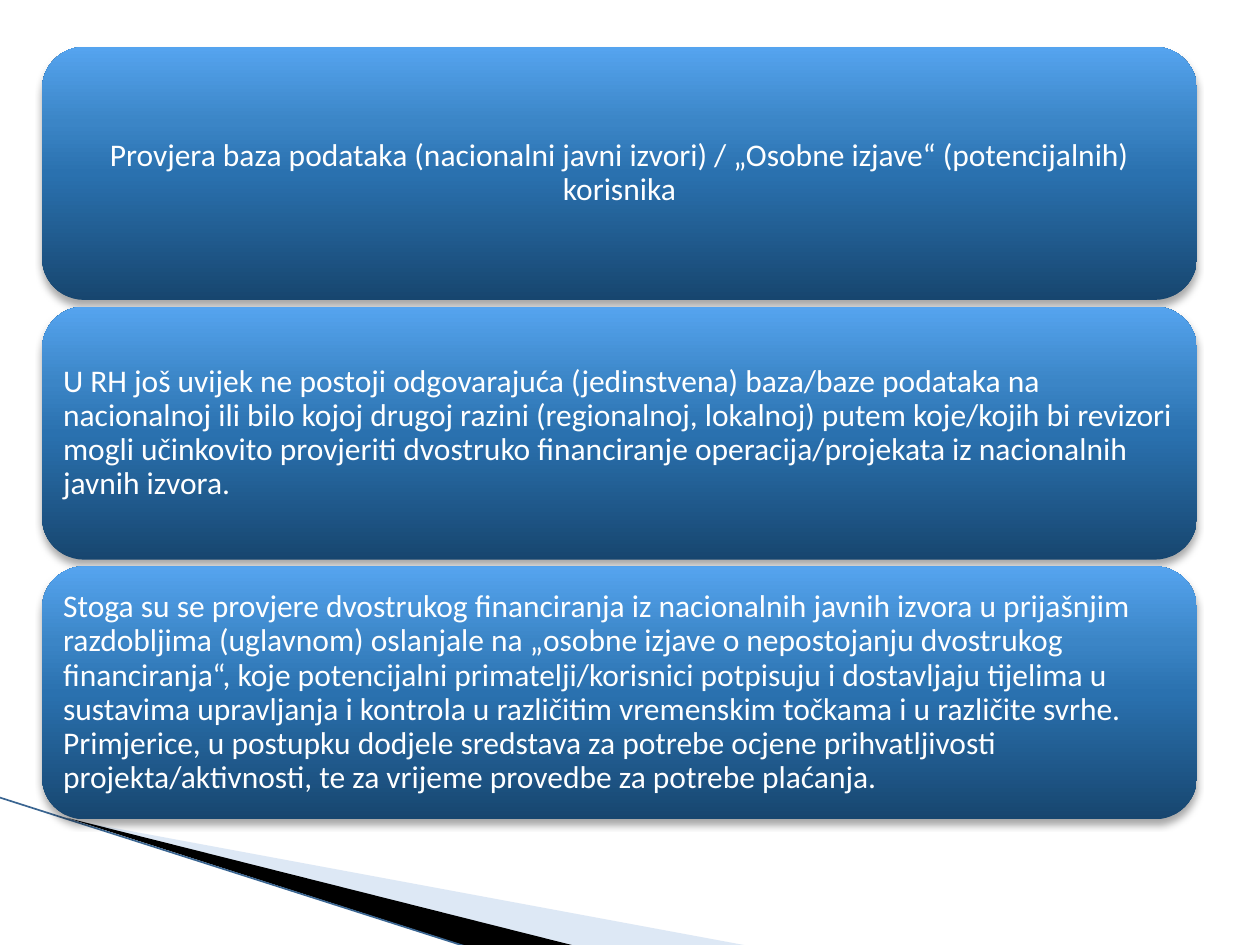
from lxml import etree
from pptx import Presentation
from pptx.dml.color import RGBColor
from pptx.enum import shapes, text
from pptx.oxml import parse_xml
from pptx.oxml.ns import nsdecls, qn
from pptx.util import Pt

WHITE = RGBColor(0xFF, 0xFF, 0xFF)
BLACK = RGBColor(0x00, 0x00, 0x00)
PALE_BLUE = RGBColor(0xAB, 0xC6, 0xE6)
EDGE_BLUE = RGBColor(0x3A, 0x65, 0x91)
PANEL_STOPS = [
    (0, RGBColor(0x17, 0x46, 0x6F)),
    (50, RGBColor(0x2A, 0x71, 0xAF)),
    (70, RGBColor(0x3B, 0x85, 0xC6)),
    (100, RGBColor(0x55, 0xA4, 0xEF)),
]

PANEL_LEFT, PANEL_TOP = 24, 26.8
PANEL_WIDTH, PANEL_HEIGHT, PANEL_PITCH = 660, 144.6, 148.4

STATEMENTS = [
    ("Provjera baza podataka (nacionalni javni izvori) / „Osobne izjave“ "
     "(potencijalnih) korisnika", text.PP_ALIGN.CENTER),
    ("U RH još uvijek ne postoji odgovarajuća (jedinstvena) baza/baze podataka na "
     "nacionalnoj ili bilo kojoj drugoj razini (regionalnoj, lokalnoj) putem koje/kojih "
     "bi revizori mogli učinkovito provjeriti dvostruko financiranje operacija/projekata "
     "iz nacionalnih javnih izvora.", text.PP_ALIGN.LEFT),
    ("Stoga su se provjere dvostrukog financiranja iz nacionalnih javnih izvora u "
     "prijašnjim razdobljima (uglavnom) oslanjale na „osobne izjave o nepostojanju "
     "dvostrukog financiranja“, koje potencijalni primatelji/korisnici potpisuju i "
     "dostavljaju tijelima u sustavima upravljanja i kontrola u različitim vremenskim "
     "točkama i u različite svrhe. Primjerice, u postupku dodjele sredstava za potrebe "
     "ocjene prihvatljivosti projekta/aktivnosti, te za vrijeme provedbe za potrebe "
     "plaćanja.", text.PP_ALIGN.LEFT),
]


def apply_format(target, values):
    """Set each named attribute of the target."""
    for name, value in values.items():
        setattr(target, name, value)


def add_wedge(slide, corners, color, opacity=100):
    """Draw a filled outline through the corners, given in points."""
    start, *rest = [(Pt(x), Pt(y)) for x, y in corners]
    builder = slide.shapes.build_freeform(*start)
    builder.add_line_segments(rest, close=True)
    wedge = builder.convert_to_shape()
    wedge.shadow.inherit = False
    wedge.fill.solid()
    wedge.fill.fore_color.rgb = color
    wedge.line.fill.background()
    if opacity < 100:
        tint = wedge.fill._xPr.find(".//" + qn("a:srgbClr"))
        etree.SubElement(tint, qn("a:alpha"), val=str(opacity * 1000))


def add_edge(slide, start, end):
    """Draw the thin line along the corner wedges."""
    edge = slide.shapes.add_connector(
        shapes.MSO_CONNECTOR.STRAIGHT, *[Pt(v) for v in (*start, *end)])
    edge.line.color.rgb = EDGE_BLUE
    edge.line.width = Pt(0.95)
    etree.SubElement(edge._element.spPr, qn("a:effectLst"))


def add_panel_finish(panel):
    """Give a panel its upward gradient and soft shadow."""
    properties = panel._element.spPr
    stops = "".join(
        f'<a:gs pos="{position * 1000}"><a:srgbClr val="{color}"/></a:gs>'
        for position, color in PANEL_STOPS)
    properties.append(parse_xml(
        f'<a:gradFill {nsdecls("a")} rotWithShape="1"><a:gsLst>{stops}</a:gsLst>'
        '<a:lin ang="16200000" scaled="0"/></a:gradFill>'))
    panel.line.fill.background()
    panel.shadow.inherit = False
    properties.find(qn("a:effectLst")).append(parse_xml(
        f'<a:outerShdw {nsdecls("a")} blurRad="{Pt(4)}" dist="{Pt(3)}" dir="5400000" '
        f'rotWithShape="0"><a:srgbClr val="{BLACK}"><a:alpha val="35000"/></a:srgbClr>'
        '</a:outerShdw>'))


def add_panel(slide, row, statement, alignment):
    """Add one rounded panel holding a statement."""
    panel = slide.shapes.add_shape(
        shapes.MSO_SHAPE.ROUNDED_RECTANGLE, Pt(PANEL_LEFT),
        Pt(PANEL_TOP + row * PANEL_PITCH), Pt(PANEL_WIDTH), Pt(PANEL_HEIGHT))
    add_panel_finish(panel)
    frame = panel.text_frame
    apply_format(frame, {
        "word_wrap": True, "vertical_anchor": text.MSO_ANCHOR.MIDDLE,
        **{f"margin_{side}": Pt(5) for side in ("left", "top", "right", "bottom")}})
    paragraph = frame.paragraphs[0]
    paragraph.text = statement
    apply_format(paragraph, {"alignment": alignment, "line_spacing": 0.9})
    apply_format(paragraph.font, {"name": "Calibri", "size": Pt(18)})
    paragraph.font.color.rgb = WHITE


def main():
    """Build the slide and save it."""
    deck = Presentation()
    apply_format(deck, {"slide_width": Pt(720), "slide_height": Pt(540)})
    slide = deck.slides.add_slide(deck.slide_layouts[6])
    add_wedge(slide, [(39.6, 468.4), (428.4, 540.6), (328.3, 540.6)], PALE_BLUE, 40)
    add_wedge(slide, [(38.4, 467.4), (329, 540.6), (268, 541.2)], BLACK)
    add_edge(slide, (-0.6, 455.6), (267.2, 541.2))
    for row, (statement, alignment) in enumerate(STATEMENTS):
        add_panel(slide, row, statement, alignment)
    deck.save("out.pptx")


if __name__ == "__main__":
    main()
